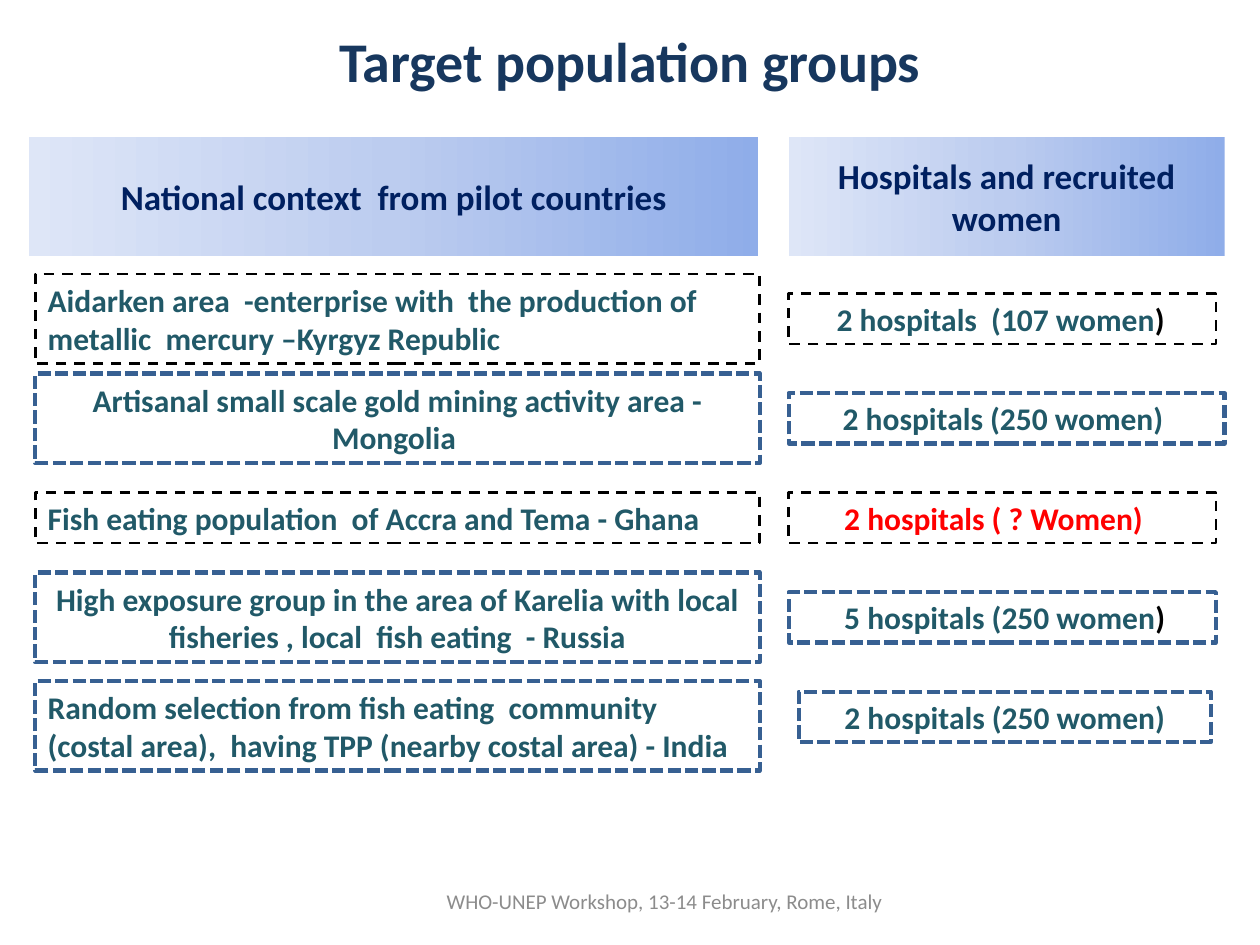
"""Build the slide on target population groups and recruited women."""
import copy
from dataclasses import dataclass

import pptx
import pptx.dml.color
import pptx.enum.dml
import pptx.enum.shapes
import pptx.enum.text
import pptx.oxml.ns
import pptx.util

Inches = pptx.util.Inches
Pt = pptx.util.Pt
Align = pptx.enum.text.PP_ALIGN
Anchor = pptx.enum.text.MSO_ANCHOR
Dash = pptx.enum.dml.MSO_LINE

TEAL, BLACK, RED = "215968", "000000", "FF0000"
FIRST_CENTER, ROW_PITCH = 2.53, 0.79
GROUP_LEFT, GROUP_WIDTH = 0.28, 5.75
HOSPITAL_LEFT, HOSPITAL_WIDTH = 6.26, 3.39
HEADER_TOP, HEADER_HEIGHT = 1.09, 0.94
ONE_LINE, TWO_LINES = 0.4, 0.71
HEADER_STOPS = ((0, "8FADE9"), (0.5, "BCCCEF"), (1, "DEE6F7"))


@dataclass
class Border:
    color: str
    width: float
    dash: Dash


THIN = Border(BLACK, 1.5, Dash.DASH)
THICK = Border("376092", 2.5, Dash.SQUARE_DOT)


@dataclass
class Cell:
    text: str
    border: Border
    left: float
    width: float
    height: float = ONE_LINE
    align: Align = Align.LEFT
    indent: float = 0
    color: str = TEAL
    ending: str = ""
    shift: float = 0


def group(text: str, border: Border, **options) -> Cell:
    return Cell(text, border, GROUP_LEFT, GROUP_WIDTH, **options)


def hospitals(text: str, border: Border, left: float = HOSPITAL_LEFT,
              width: float = HOSPITAL_WIDTH, **options) -> Cell:
    return Cell(text, border, left, width, **options)


ROWS = (
    (group("Aidarken area  -enterprise with  the production of metallic  mercury –Kyrgyz Republic",
           THIN, height=TWO_LINES),
     hospitals("2 hospitals  (107 women", THIN, indent=0.28, ending=")")),
    (group("Artisanal small scale gold mining activity area - Mongolia ",
           THICK, height=TWO_LINES, align=Align.CENTER),
     hospitals("2 hospitals (250 women) ", THICK, width=3.46, align=Align.CENTER)),
    (group("Fish eating population  of Accra and Tema - Ghana", THIN),
     hospitals("2 hospitals ( ? Women)", THIN, indent=0.34, color=RED)),
    (group("High exposure group in the area of Karelia with local fisheries , local  fish eating  - Russia",
           THICK, height=TWO_LINES, align=Align.CENTER),
     hospitals("5 hospitals (250 women", THICK, indent=0.34, ending=")")),
    (group("Random selection from fish eating  community (costal area),  "
           "having TPP (nearby costal area) - India",
           THICK, height=TWO_LINES, shift=0.07),
     hospitals("2 hospitals (250 women)", THICK, left=6.34, width=3.27, align=Align.CENTER)),
)


def rgb(value: str) -> pptx.dml.color.RGBColor:
    return pptx.dml.color.RGBColor.from_string(value)


def style_run(run, size: float, color: str, bold: bool = True) -> None:
    run.font.name = "Calibri"
    run.font.size = Pt(size)
    run.font.bold = bold
    run.font.color.rgb = rgb(color)


def write(shape, text: str, size: float, color: str,
          align: Align = Align.CENTER, bold: bool = True) -> None:
    frame = shape.text_frame
    frame.text = text
    frame.word_wrap = True
    frame.vertical_anchor = Anchor.MIDDLE
    frame.paragraphs[0].alignment = align
    style_run(frame.paragraphs[0].runs[0], size, color, bold)


def add_rectangle(slide, left: float, top: float, width: float, height: float):
    shape = slide.shapes.add_shape(
        pptx.enum.shapes.MSO_SHAPE.RECTANGLE,
        Inches(left), Inches(top), Inches(width), Inches(height))
    shape.shadow.inherit = False
    return shape


def add_header(slide, text: str, left: float, width: float) -> None:
    header = add_rectangle(slide, left, HEADER_TOP, width, HEADER_HEIGHT)
    header.line.fill.background()
    header.fill.gradient()
    header.fill.gradient_angle = 180
    stop_list = header.fill._xPr.find(".//" + pptx.oxml.ns.qn("a:gsLst"))
    stop_list.insert(1, copy.deepcopy(stop_list[0]))
    for stop, (position, color) in zip(header.fill.gradient_stops, HEADER_STOPS):
        stop.position = position
        stop.color.rgb = rgb(color)
    write(header, text, 20, "002060")


def add_cell(slide, cell: Cell, center: float) -> None:
    top = center + cell.shift - cell.height / 2
    box = add_rectangle(slide, cell.left, top, cell.width, cell.height)
    box.fill.background()
    box.line.color.rgb = rgb(cell.border.color)
    box.line.width = Pt(cell.border.width)
    box.line.dash_style = cell.border.dash
    write(box, cell.text, 18, cell.color, cell.align)
    box.text_frame.margin_left = Inches(0.1 + cell.indent)
    box.text_frame.auto_size = pptx.enum.text.MSO_AUTO_SIZE.SHAPE_TO_FIT_TEXT
    if cell.ending:
        ending = box.text_frame.paragraphs[0].add_run()
        ending.text = cell.ending
        style_run(ending, 18, BLACK)


def add_label(slide, text: str, left: float, top: float, width: float, height: float,
              size: float, color: str, bold: bool) -> None:
    label = slide.shapes.add_textbox(Inches(left), Inches(top), Inches(width), Inches(height))
    write(label, text, size, color, bold=bold)


def main() -> None:
    deck = pptx.Presentation()
    deck.slide_width, deck.slide_height = Inches(10), Inches(7.5)
    slide = deck.slides.add_slide(deck.slide_layouts[6])
    add_label(slide, "Target population groups", 0.5, 0.16, 9, 0.64, 32, "17375E", True)
    add_header(slide, "National context  from pilot countries", 0.23, 5.79)
    add_header(slide, "Hospitals and recruited women", HOSPITAL_LEFT, 3.46)
    for index, row in enumerate(ROWS):
        for cell in row:
            add_cell(slide, cell, FIRST_CENTER + index * ROW_PITCH)
    add_label(slide, "WHO-UNEP Workshop, 13-14 February, Rome, Italy",
              3.42, 6.95, 3.71, 0.4, 12, "8C8C8C", False)
    deck.save("out.pptx")


if __name__ == "__main__":
    main()
